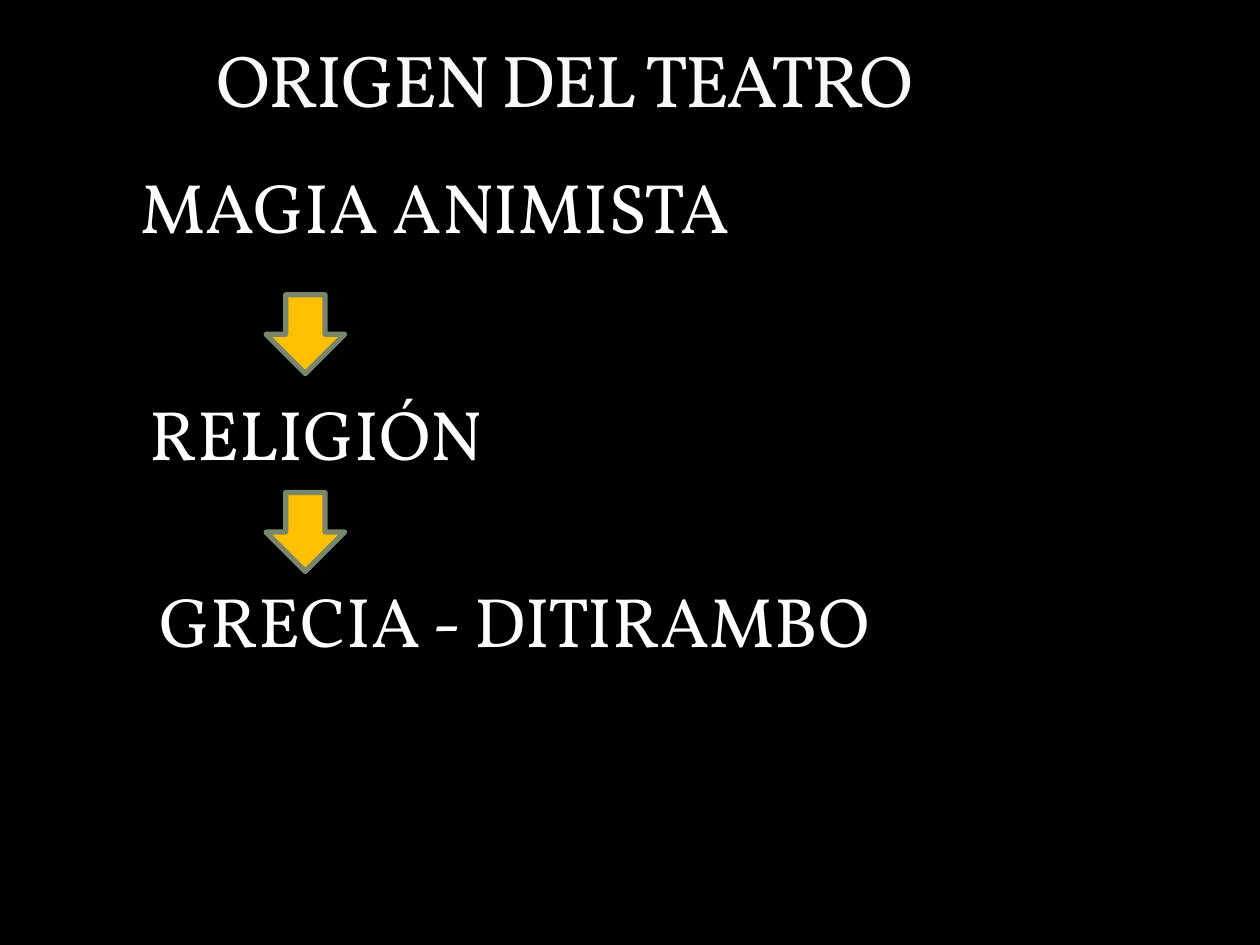
from pptx import Presentation
from pptx.dml.color import RGBColor
from pptx.enum.shapes import MSO_SHAPE
from pptx.enum.text import MSO_ANCHOR
from pptx.util import Pt

ARROW = MSO_SHAPE.DOWN_ARROW
TOP, BOTTOM = MSO_ANCHOR.TOP, MSO_ANCHOR.BOTTOM
FONT = "Vollkorn"
LABELS = [
    ("MAGIA ANIMISTA", 73.4, 90, 371.5),
    ("RELIGIÓN", 78.5, 219.6, 332),
    ("GRECIA - DITIRAMBO", 84.2, 326.2, 534),
]
ARROW_TOPS = [168.5, 281.5]


def paint(color, value):
    """Set a colour format from a hex string."""
    color.rgb = RGBColor.from_string(value)


def add_text(slide, text, box, size=40, color="FFFFFF", anchor=TOP):
    """Add a one-line text box and return its paragraph."""
    frame = slide.shapes.add_textbox(*map(Pt, box)).text_frame
    frame.word_wrap = True
    frame.vertical_anchor = anchor
    line = frame.paragraphs[0]
    line.text = text
    line.font.name = FONT
    line.font.size = Pt(size)
    paint(line.font.color, color)
    return line


def add_title(slide, text):
    """Add the slide title with tightened letter spacing."""
    line = add_text(slide, text, (116.5, 0, 603.5, 73.4), 42, "F9F9F9", BOTTOM)
    line.runs[0].font._element.set("spc", "-100")


def add_arrow(slide, top):
    """Add a block arrow that points to the next stage."""
    arrow = slide.shapes.add_shape(ARROW, Pt(152), Pt(top), Pt(45), Pt(45))
    arrow.shadow.inherit = False
    arrow.fill.solid()
    paint(arrow.fill.fore_color, "FFC000")
    paint(arrow.line.color, "7A866C")
    arrow.line.width = Pt(3)


def main():
    """Build and save the slide."""
    deck = Presentation()
    deck.slide_width, deck.slide_height = Pt(720), Pt(540)
    slide = deck.slides.add_slide(deck.slide_layouts[6])
    back = slide.background.fill
    back.solid()
    paint(back.fore_color, "000000")
    add_title(slide, "ORIGEN DEL TEATRO")
    for text, left, top, width in LABELS:
        add_text(slide, text, (left, top, width, 55.4))
    for top in ARROW_TOPS:
        add_arrow(slide, top)
    deck.save("out.pptx")


if __name__ == "__main__":
    main()
